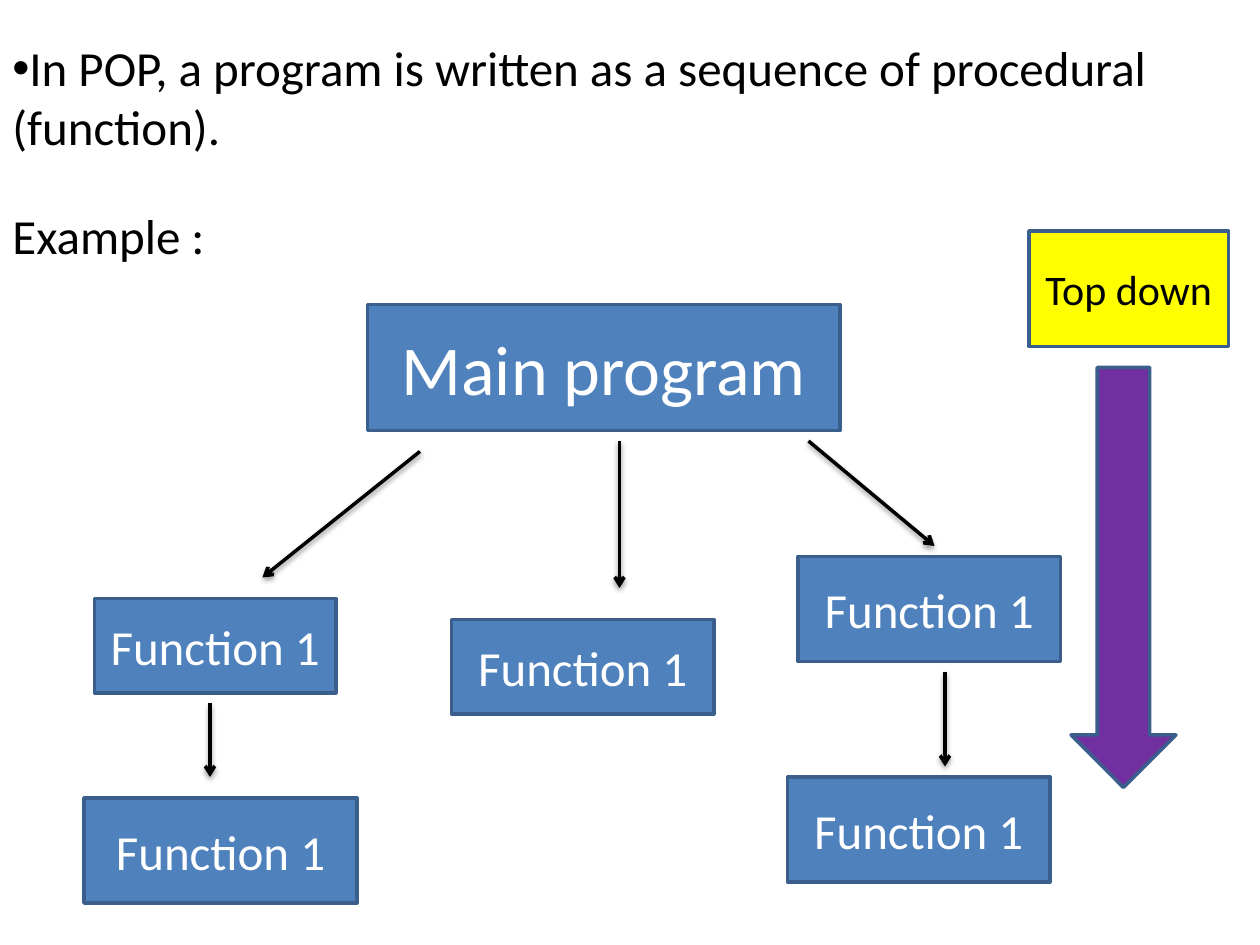
from lxml import etree
from pptx import Presentation
from pptx.dml.color import RGBColor
from pptx.enum.shapes import MSO_CONNECTOR, MSO_SHAPE
from pptx.enum.text import MSO_ANCHOR, PP_ALIGN
from pptx.oxml.ns import qn
from pptx.util import Inches, Pt

RECTANGLE, DOWN_ARROW = MSO_SHAPE.RECTANGLE, MSO_SHAPE.DOWN_ARROW
STRAIGHT = MSO_CONNECTOR.STRAIGHT
LEFT, CENTER = PP_ALIGN.LEFT, PP_ALIGN.CENTER
TOP, MIDDLE = MSO_ANCHOR.TOP, MSO_ANCHOR.MIDDLE

FONT = "Calibri"
BLUE, OUTLINE, YELLOW, PURPLE = "4F81BD", "3A5F8C", "FFFF00", "7030A0"
BLACK, WHITE = "000000", "FFFFFF"

# Content: places are columns and rows of a 120 by 90 grid
COLUMNS, ROWS = 120, 90
TEXTS = [  # text, (left, top, width, height), bullet
    ("In POP, a program is written as a sequence of procedural (function).",
     (0, 3, 120, 20), "•"),
    ("Example :", (0, 19, 80, 7), None),
]
BOXES = [  # text, (left, top, width, height), size, fill, text colour
    ("Main program", (35, 29, 45, 12), 40, BLUE, WHITE),
    ("Function 1", (9, 57, 23, 9), 28, BLUE, WHITE),
    ("Function 1", (43, 59, 25, 9), 28, BLUE, WHITE),
    ("Function 1", (76, 53, 25, 10), 28, BLUE, WHITE),
    ("Function 1", (8, 76, 26, 10), 28, BLUE, WHITE),
    ("Function 1", (75, 74, 25, 10), 28, BLUE, WHITE),
    ("Top down", (98, 22, 19, 11), 24, YELLOW, BLACK),
]
CALLS = [  # from column, from row, to column, to row
    (40, 43, 25, 55),
    (59, 42, 59, 56),
    (77, 42, 89, 52),
    (20, 67, 20, 74),
    (90, 64, 90, 73),
]
DIRECTION_ARROW = (102, 35, 10, 40)

presentation = Presentation()
presentation.slide_width, presentation.slide_height = Inches(10), Inches(7.5)
slide = presentation.slides.add_slide(presentation.slide_layouts[6])


def color(value):
    return RGBColor.from_string(value)


def place(cells):
    """Turn alternating columns and rows into slide lengths."""
    column = presentation.slide_width / COLUMNS
    row = presentation.slide_height / ROWS
    return [round(cell * (row if index % 2 else column))
            for index, cell in enumerate(cells)]


def write(shape, text, size=28, fill=BLACK, align=LEFT, anchor=TOP, bullet=None):
    frame = shape.text_frame
    frame.word_wrap = True
    frame.vertical_anchor = anchor
    paragraph = frame.paragraphs[0]
    paragraph.alignment = align
    run = paragraph.add_run()
    run.text = text
    run.font.name, run.font.size = FONT, Pt(size)
    run.font.color.rgb = color(fill)
    if bullet:
        properties = paragraph._p.get_or_add_pPr()
        etree.SubElement(properties, qn("a:buFont"), typeface="Arial")
        etree.SubElement(properties, qn("a:buChar"), char=bullet)


def add_block(kind, cells, fill):
    shape = slide.shapes.add_shape(kind, *place(cells))
    shape.shadow.inherit = False
    shape.fill.solid()
    shape.fill.fore_color.rgb = color(fill)
    shape.line.color.rgb = color(OUTLINE)
    shape.line.width = Pt(2)
    return shape


def add_arrow(cells):
    connector = slide.shapes.add_connector(STRAIGHT, *place(cells))
    connector.line.color.rgb = color(BLACK)
    connector.line.width = Pt(2)
    etree.SubElement(connector.line._get_or_add_ln(), qn("a:tailEnd"), type="arrow")
    # Soft shadow straight below the line
    effects = etree.SubElement(connector._element.spPr, qn("a:effectLst"))
    shadow = etree.SubElement(effects, qn("a:outerShdw"), blurRad=str(Pt(3.1)),
                              dist=str(Pt(1.6)), dir="5400000", rotWithShape="0")
    shade = etree.SubElement(shadow, qn("a:srgbClr"), val=BLACK)
    etree.SubElement(shade, qn("a:alpha"), val="38000")


# Statement and example heading
for text, cells, bullet in TEXTS:
    write(slide.shapes.add_textbox(*place(cells)), text, bullet=bullet)

# Program, functions and label
for text, cells, size, fill, text_color in BOXES:
    write(add_block(RECTANGLE, cells, fill), text, size=size, fill=text_color,
          align=CENTER, anchor=MIDDLE)

# Calls between the boxes
for cells in CALLS:
    add_arrow(cells)

# Top-down direction
add_block(DOWN_ARROW, DIRECTION_ARROW, PURPLE)

presentation.save("out.pptx")
